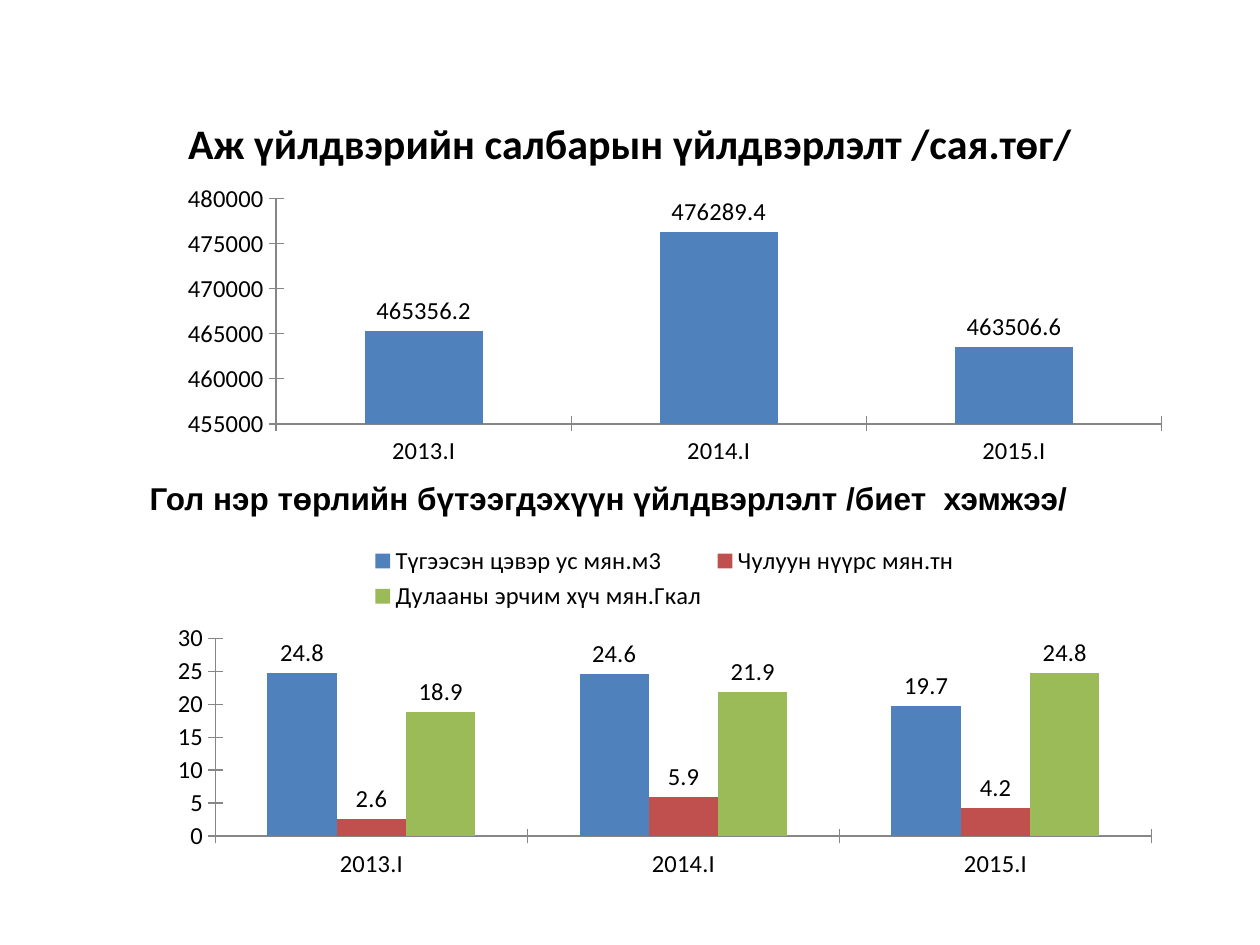
from pptx import Presentation
from pptx.chart.data import CategoryChartData
from pptx.dml.color import RGBColor
from pptx.enum.chart import XL_CHART_TYPE, XL_LABEL_POSITION, XL_LEGEND_POSITION, XL_TICK_MARK
from pptx.enum.text import MSO_ANCHOR, PP_ALIGN
from pptx.util import Inches, Pt

BLACK, GREY = "000000", "868686"
SERIES_COLOURS = ["4F81BD", "C0504D", "9BBB59"]
QUARTERS = ["2013.I", "2014.I", "2015.I"]


def colour(value):
    return RGBColor.from_string(value)


def apply_format(target, values):
    for name, value in values.items():
        setattr(target, name, value)


class SlideBuilder:
    def __init__(self, deck):
        self.page = deck.slides.add_slide(deck.slide_layouts[6])
        self.chart_font = {"name": "Calibri", "size": Pt(14)}
        self.axis_format = {
            "has_major_gridlines": False,
            "major_tick_mark": XL_TICK_MARK.CROSS,
            "minor_tick_mark": XL_TICK_MARK.NONE,
        }
        self.label_format = {
            "show_value": True,
            "number_format": "0.0",
            "number_format_is_linked": False,
            "position": XL_LABEL_POSITION.OUTSIDE_END,
        }

    def heading(self, text, bounds, font, align=PP_ALIGN.LEFT, anchor=MSO_ANCHOR.TOP):
        box = self.page.shapes.add_textbox(*map(Inches, bounds))
        apply_format(box.text_frame, {"word_wrap": True, "vertical_anchor": anchor})
        para = box.text_frame.paragraphs[0]
        para.alignment = align
        span = para.add_run()
        span.text = text
        apply_format(span.font, {"bold": True, **font})
        span.font.color.rgb = colour(BLACK)

    def column_chart(self, bounds, series, scale, legend=False):
        data = CategoryChartData()
        data.categories = QUARTERS
        for name, values in series.items():
            data.add_series(name, values)
        frame = self.page.shapes.add_chart(
            XL_CHART_TYPE.COLUMN_CLUSTERED, *map(Inches, bounds), data
        )
        chart = frame.chart
        apply_format(chart, {"has_title": False, "has_legend": legend})
        apply_format(chart.font, self.chart_font)
        chart.font.color.rgb = colour(BLACK)
        if legend:
            apply_format(
                chart.legend,
                {"position": XL_LEGEND_POSITION.TOP, "include_in_layout": False},
            )
        for axis in (chart.category_axis, chart.value_axis):
            apply_format(axis, self.axis_format)
            axis.format.line.color.rgb = colour(GREY)
        apply_format(chart.value_axis, scale)
        plot = chart.plots[0]
        apply_format(plot, {"gap_width": 150, "overlap": 0, "vary_by_categories": False})
        for column, fill in zip(plot.series, SERIES_COLOURS):
            column.format.fill.solid()
            column.format.fill.fore_color.rgb = colour(fill)
            apply_format(column.data_labels, self.label_format)


def main():
    deck = Presentation()
    apply_format(deck, {"slide_width": Inches(10), "slide_height": Inches(7.5)})
    slide = SlideBuilder(deck)
    slide.heading(
        "Аж үйлдвэрийн салбарын үйлдвэрлэлт /сая.төг/",
        (0.5, 0.78, 9, 0.7),
        {"name": "Calibri", "size": Pt(24)},
        PP_ALIGN.CENTER,
        MSO_ANCHOR.MIDDLE,
    )
    slide.heading(
        "Гол нэр төрлийн бүтээгдэхүүн үйлдвэрлэлт /биет  хэмжээ/",
        (1.09, 3.75, 8.67, 0.4),
        {"name": "Arial", "size": Pt(18)},
    )
    slide.column_chart(
        (1.25, 4.22, 8.05, 2.81),
        {
            "Түгээсэн цэвэр ус мян.м3": [24.8, 24.6, 19.7],
            "Чулуун нүүрс мян.тн": [2.6, 5.9, 4.2],
            "Дулааны эрчим хүч мян.Гкал": [18.9, 21.9, 24.8],
        },
        {"minimum_scale": 0, "maximum_scale": 30, "major_unit": 5},
        legend=True,
    )
    slide.column_chart(
        (1.33, 1.41, 8.05, 2.34),
        {"Series 1": [465356.2, 476289.4, 463506.6]},
        {"minimum_scale": 455000, "maximum_scale": 480000, "major_unit": 5000},
    )
    deck.save("out.pptx")


if __name__ == "__main__":
    main()
